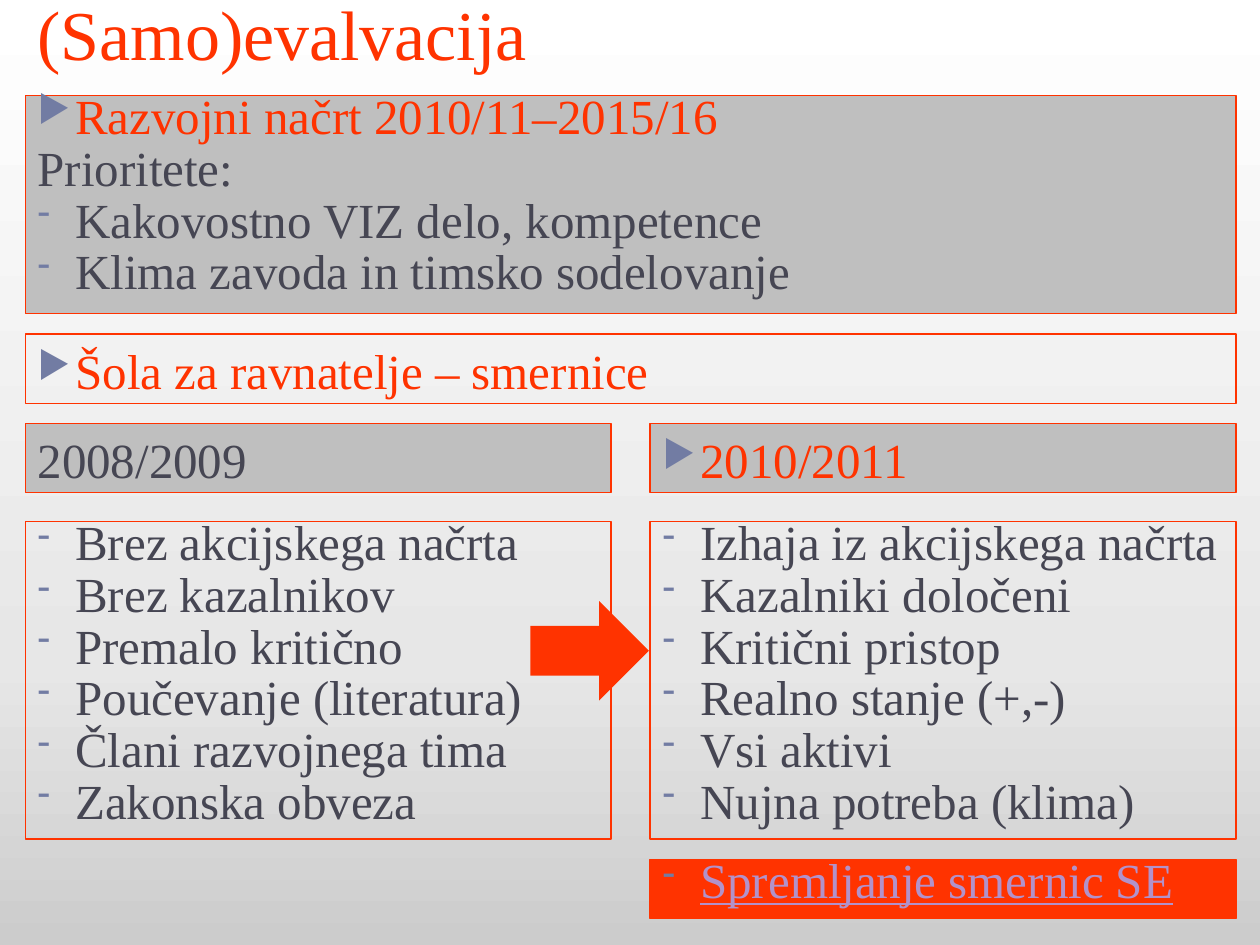
"""Builds a slide comparing school self-evaluation in 2008/2009 and 2010/2011."""
from lxml.etree import SubElement
from pptx import Presentation
from pptx.dml.color import RGBColor
from pptx.enum.shapes import MSO_SHAPE
from pptx.enum.text import MSO_ANCHOR, PP_ALIGN
from pptx.oxml.ns import qn
from pptx.util import Inches, Pt

ORANGE = RGBColor(0xFF, 0x33, 0x00)
SLATE = RGBColor(0x46, 0x46, 0x53)
BLUE = RGBColor(0x72, 0x7C, 0xA3)
GREY = RGBColor(0xBF, 0xBF, 0xBF)
LILAC = RGBColor(0xB2, 0x92, 0xCA)
BACKGROUND = ((0, "CCCCCC"), (30, "E7E7E7"), (100, "FFFFFF"))

LEFT, RIGHT = 0.2, 5.16
HALF, FULL = 4.65, 9.61
HEADER = 0.55
ARROW, DASH = "▶", "-"


def add_bullet(p, char):
    pPr = p._p.get_or_add_pPr()
    SubElement(SubElement(pPr, qn("a:buClr")), qn("a:srgbClr"), val=str(BLUE))
    SubElement(pPr, qn("a:buSzPct"), val="76000")
    SubElement(pPr, qn("a:buChar"), char=char)


def write(p, text, size=28, color=SLATE, bullet=None, tight=False,
          before=0, indent=0.3, underline=None):
    p.alignment = PP_ALIGN.LEFT
    p.space_before = Pt(before)
    if tight:
        p.line_spacing = 0.7
        p.space_before = Pt(6)
    if indent:
        pPr = p._p.get_or_add_pPr()
        pPr.set("marL", str(Inches(indent)))
        pPr.set("indent", str(-Inches(indent)))
    if bullet:
        add_bullet(p, bullet)
    r = p.add_run()
    r.text = text
    r.font.name = "Times New Roman"
    r.font.size = Pt(size)
    r.font.color.rgb = color
    r.font.underline = underline


class SlideBuilder:
    def __init__(self, prs):
        self.s = prs.slides.add_slide(prs.slide_layouts[6])

    def background(self, stops):
        fill = self.s.background.fill
        fill.gradient()
        fill.gradient_angle = 90
        gs_list = next(self.s._element.iter(qn("a:gsLst")))
        for gs in list(gs_list):
            gs_list.remove(gs)
        for position, color in stops:
            gs = SubElement(gs_list, qn("a:gs"), pos=str(position * 1000))
            SubElement(gs, qn("a:srgbClr"), val=color)

    def title(self, text, x, y, w, h):
        sp = self.s.shapes.add_textbox(Inches(x), Inches(y), Inches(w), Inches(h))
        tf = sp.text_frame
        tf.word_wrap = True
        tf.vertical_anchor = MSO_ANCHOR.BOTTOM
        write(tf.paragraphs[0], text, size=40, color=ORANGE, indent=0)

    def shape(self, kind, x, y, w, h, fill=None, line=None):
        sp = self.s.shapes.add_shape(kind, Inches(x), Inches(y), Inches(w), Inches(h))
        sp.shadow.inherit = False
        if fill is None:
            sp.fill.background()
        else:
            sp.fill.solid()
            sp.fill.fore_color.rgb = fill
        if line is None:
            sp.line.fill.background()
        else:
            sp.line.color.rgb = line
            sp.line.width = Pt(0.75)
        return sp

    def box(self, paragraphs, x, y, w, h, fill=None, **shared):
        sp = self.shape(MSO_SHAPE.RECTANGLE, x, y, w, h, fill, ORANGE)
        tf = sp.text_frame
        tf.word_wrap = True
        tf.vertical_anchor = MSO_ANCHOR.TOP
        for i, (text, style) in enumerate(paragraphs):
            p = tf.add_paragraph() if i else tf.paragraphs[0]
            write(p, text, **{**shared, **style})

    def dash_list(self, items, x, y, w, h, fill=None, **style):
        self.box([(item, style) for item in items], x, y, w, h, fill,
                 bullet=DASH, tight=True)

    def arrow(self, x, y, w, h):
        self.shape(MSO_SHAPE.RIGHT_ARROW, x, y, w, h, ORANGE)


def main():
    prs = Presentation()
    prs.slide_width, prs.slide_height = Inches(10), Inches(7.5)
    b = SlideBuilder(prs)
    b.background(BACKGROUND)
    b.title("(Samo)evalvacija", LEFT, -0.19, 9.07, 0.83)

    heading = {"color": ORANGE, "bullet": ARROW}
    b.box([("Šola za ravnatelje – smernice", heading)], LEFT, 2.65, FULL, HEADER)
    b.box([
        ("Razvojni načrt 2010/11–2015/16", heading),
        ("Prioritete:", {}),
        ("Kakovostno VIZ delo, kompetence", {"bullet": DASH}),
        ("Klima zavoda in timsko sodelovanje", {"bullet": DASH}),
    ], LEFT, 0.76, FULL, 1.73, GREY, tight=True)

    columns = (
        (LEFT, "2008/2009", {"before": 6}, (
            "Brez akcijskega načrta", "Brez kazalnikov", "Premalo kritično",
            "Poučevanje (literatura)", "Člani razvojnega tima", "Zakonska obveza")),
        (RIGHT, "2010/2011", heading, (
            "Izhaja iz akcijskega načrta", "Kazalniki določeni", "Kritični pristop",
            "Realno stanje (+,-)", "Vsi aktivi", "Nujna potreba (klima)")),
    )
    for x, year, style, items in columns:
        b.box([(year, style)], x, 3.36, HALF, HEADER, GREY)
        b.dash_list(items, x, 4.14, HALF, 2.52)

    b.arrow(4.21, 4.77, 0.94, 0.79)
    b.dash_list(["Spremljanje smernic SE"], RIGHT, 6.82, HALF, 0.47, ORANGE,
                color=LILAC, underline=True)
    prs.save("out.pptx")


if __name__ == "__main__":
    main()
